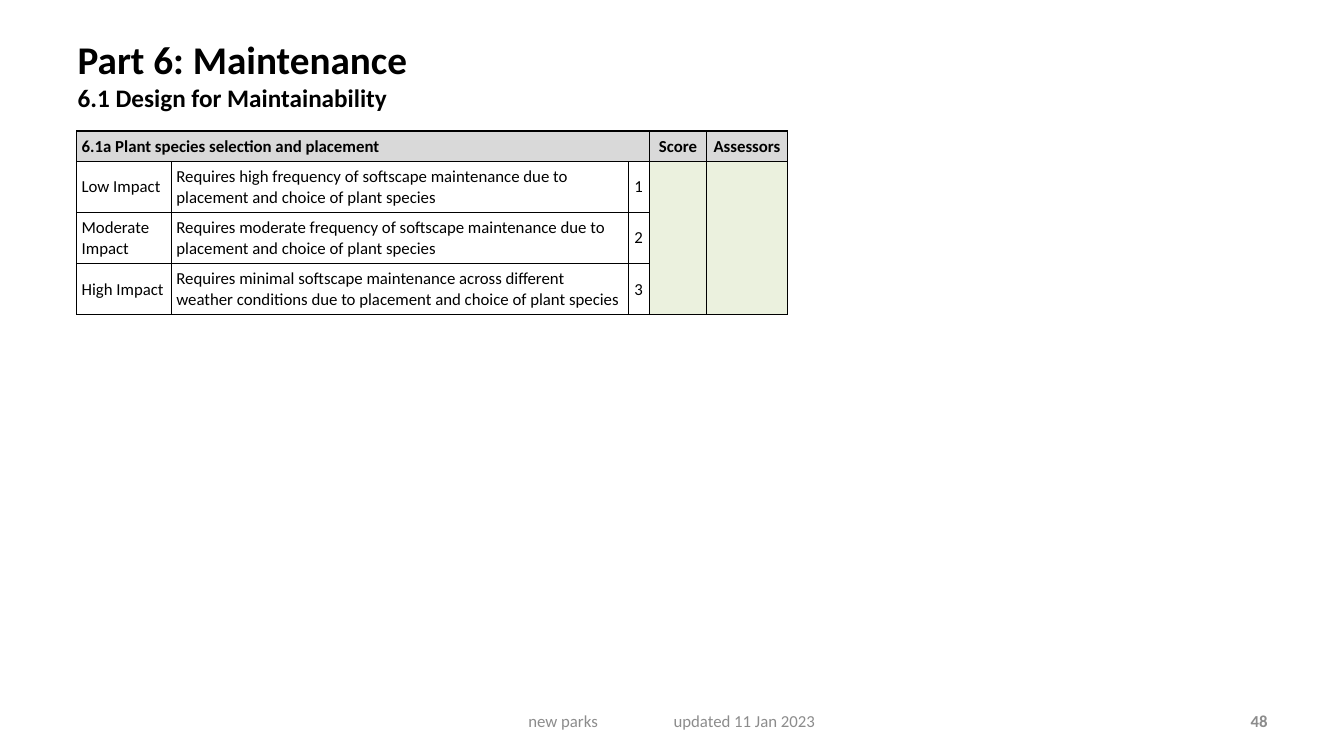
from lxml import etree
from pptx import Presentation
from pptx.dml.color import RGBColor
from pptx.enum.text import MSO_ANCHOR as Anchor, MSO_AUTO_SIZE as AutoSize, PP_ALIGN as Align
from pptx.oxml import parse_xml
from pptx.oxml.ns import nsdecls, qn
from pptx.util import Inches, Pt


def style(paragraph, size, color="000000", bold=False, align=Align.LEFT):
    paragraph.alignment = align
    font = paragraph.font
    font.name, font.size, font.bold = "Calibri", Pt(size), bold
    font.color.rgb = RGBColor.from_string(color)


def add_borders(cell):
    for side in ("lnL", "lnR", "lnT", "lnB"):
        cell._tc.get_or_add_tcPr().append(parse_xml(
            f'<a:{side} {nsdecls("a")} w="{Pt(1)}"><a:solidFill>'
            f'<a:srgbClr val="000000"/></a:solidFill></a:{side}>'))


prs = Presentation()
prs.slide_width, prs.slide_height = Inches(13.33), Inches(7.5)
slide = prs.slides.add_slide(prs.slide_layouts[5])

# Title with section line
title = slide.shapes.title
title.left, title.top = Inches(0.67), Inches(0.3)
title.width, title.height = Inches(10.36), Inches(0.99)
title.text_frame.vertical_anchor = Anchor.TOP
title.text_frame.auto_size = AutoSize.NONE
heading = title.text_frame.paragraphs[0]
style(heading, 28, bold=True)
heading.add_run().text = "Part 6: Maintenance"
heading.add_line_break()
section = heading.add_run()
section.text = "6.1 Design for Maintainability"
section.font.size = Pt(18)

# Scoring table
rows = [
    ("6.1a Plant species selection and placement", "", "", "Score", "Assessors"),
    ("Low Impact", "Requires high frequency of softscape maintenance due to "
     "placement and choice of plant species", "1", "", ""),
    ("Moderate Impact", "Requires moderate frequency of softscape maintenance due to "
     "placement and choice of plant species", "2", "", ""),
    ("High Impact", "Requires minimal softscape maintenance across different "
     "weather conditions due to placement and choice of plant species", "3", "", ""),
]
column_widths = [0.94, 4.53, 0.21, 0.57, 0.8]
row_heights = [0.3, 0.5, 0.5, 0.5]
scoring = slide.shapes.add_table(
    len(rows), len(column_widths), Inches(0.76), Inches(1.3),
    Inches(sum(column_widths)), Inches(sum(row_heights))).table
scoring.first_row = scoring.horz_banding = False
for column, width in zip(scoring.columns, column_widths):
    column.width = Inches(width)
for row, height in zip(scoring.rows, row_heights):
    row.height = Inches(height)

for r, texts in enumerate(rows):
    for c, text in enumerate(texts):
        cell = scoring.cell(r, c)
        cell.text = text
        cell.vertical_anchor = Anchor.MIDDLE
        cell.margin_left = cell.margin_right = Inches(0.05)
        cell.margin_top = cell.margin_bottom = Inches(0.05)
        style(cell.text_frame.paragraphs[0], 12, bold=r == 0,
              align=Align.CENTER if c >= 2 else Align.LEFT)
        add_borders(cell)
        if r > 0 and c < 3:
            cell.fill.background()
        else:
            cell.fill.solid()
            cell.fill.fore_color.rgb = RGBColor.from_string("D9D9D9" if r == 0 else "EBF1DE")
scoring.cell(1, 1).vertical_anchor = Anchor.BOTTOM
scoring.cell(0, 0).merge(scoring.cell(0, 2))
for c in (3, 4):
    scoring.cell(1, c).merge(scoring.cell(3, c))

# Footer and page number
for text, left, width, bold, align in [
    ("new parks\tupdated 11 Jan 2023", 4.56, 4.22, False, Align.LEFT),
    ("48", 9.56, 3.11, True, Align.RIGHT),
]:
    frame = slide.shapes.add_textbox(
        Inches(left), Inches(6.95), Inches(width), Inches(0.4)).text_frame
    frame.word_wrap = True
    frame.vertical_anchor = Anchor.MIDDLE
    note = frame.paragraphs[0]
    note.text = text
    if "\t" in text:
        frame.margin_left = Inches(0.68)
        tabs = etree.SubElement(note._p.get_or_add_pPr(), qn("a:tabLst"))
        etree.SubElement(tabs, qn("a:tab"), pos=str(Inches(1.44)), algn="l")
    style(note, 12, "8C8C8C", bold, align)

prs.save("out.pptx")
